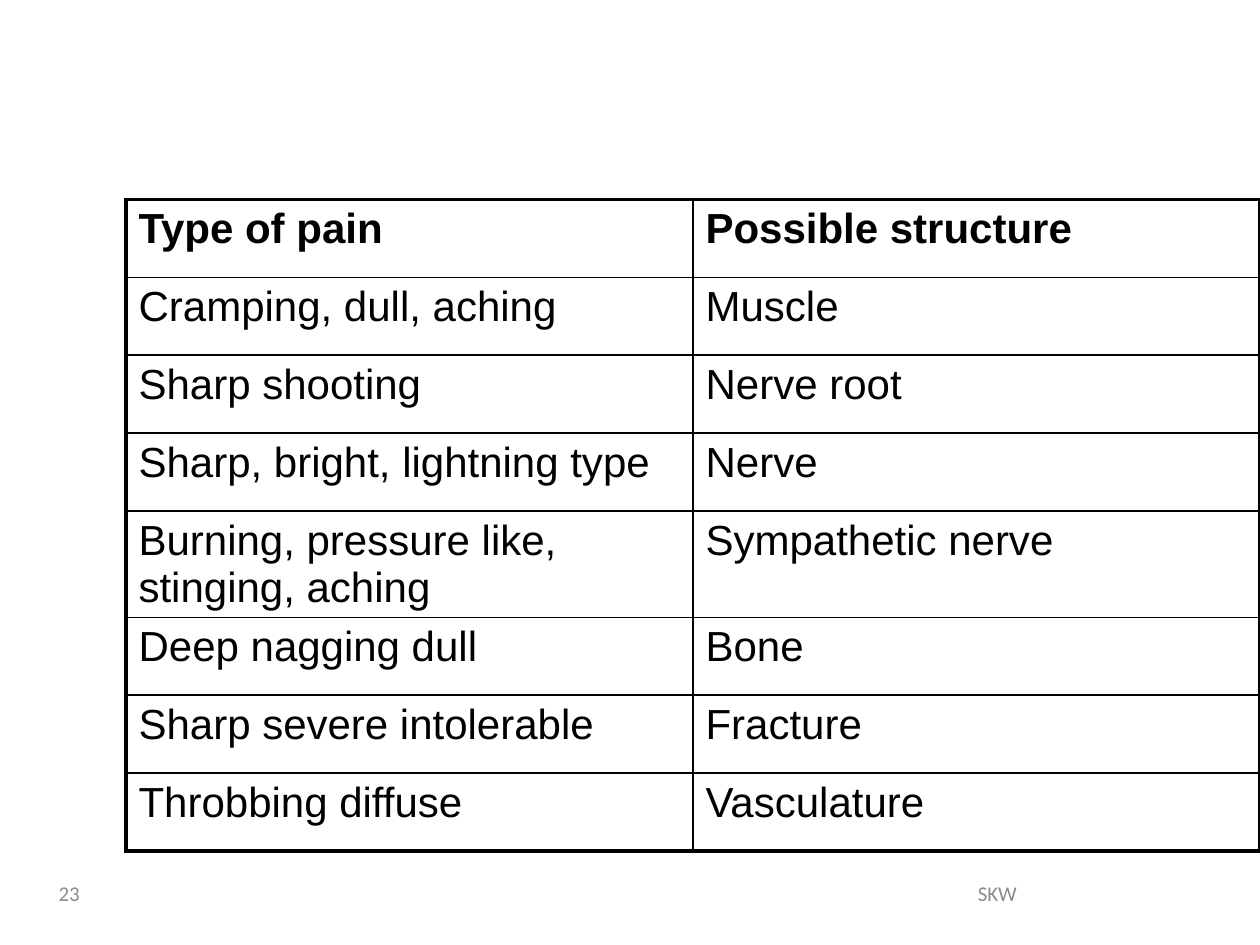
"""Build a slide with a table that links types of pain to body structures."""
from lxml.etree import SubElement
from pptx import Presentation
from pptx.dml.color import RGBColor
from pptx.enum.text import MSO_ANCHOR as Anchor, PP_ALIGN as Align
from pptx.oxml.ns import qn
from pptx.util import Cm, Pt


def write_text(frame, text, size=24, font="Arial", color="000000", bold=False,
               align=Align.LEFT, anchor=Anchor.TOP):
    frame.word_wrap = True
    frame.vertical_anchor = anchor
    paragraph = frame.paragraphs[0]
    paragraph.alignment = align
    run = paragraph.add_run()
    run.text = text
    run.font.size = Pt(size)
    run.font.name = font
    run.font.bold = bold
    run.font.color.rgb = RGBColor.from_string(color)


def add_border(cell, side, width, color="000000"):
    properties = cell._tc.get_or_add_tcPr()
    line = SubElement(properties, qn(f"a:ln{side}"), w=str(Pt(width)))
    fill = SubElement(line, qn("a:solidFill"))
    SubElement(fill, qn("a:srgbClr"), val=color)


presentation = Presentation()
presentation.slide_width = Cm(25.4)
presentation.slide_height = Cm(19.05)
slide = presentation.slides.add_slide(presentation.slide_layouts[6])

pain_rows = [
    ("Type of pain", "Possible structure"),
    ("Cramping, dull, aching", "Muscle"),
    ("Sharp shooting", "Nerve root"),
    ("Sharp, bright, lightning type", "Nerve"),
    ("Burning, pressure like, stinging, aching", "Sympathetic nerve"),
    ("Deep nagging dull", "Bone"),
    ("Sharp severe intolerable", "Fracture"),
    ("Throbbing diffuse", "Vasculature"),
]
row_height = Cm(1.57)
last_row = len(pain_rows) - 1
table = slide.shapes.add_table(len(pain_rows), 2, Cm(2.54), Cm(4.02), Cm(22.86),
                               row_height * len(pain_rows)).table
table.first_row = False
table.horz_banding = False

for row, texts in enumerate(pain_rows):
    table.rows[row].height = row_height
    for column, text in enumerate(texts):
        cell = table.cell(row, column)
        write_text(cell.text_frame, text, bold=row == 0)
        outer_sides = {"L": column == 0, "R": column == 1,
                       "T": row == 0, "B": row == last_row}
        for side, is_outer in outer_sides.items():
            add_border(cell, side, 2.25 if is_outer else 1)
        cell.fill.background()

footers = [
    ("23", 0.23, 1.63, Align.RIGHT),
    ("SKW", 16.08, 8.05, Align.CENTER),
]
for text, left, width, align in footers:
    footer = slide.shapes.add_textbox(Cm(left), Cm(17.35), Cm(width), Cm(1.33))
    write_text(footer.text_frame, text, size=12, font="Calibri", color="8C8C8C",
               align=align, anchor=Anchor.MIDDLE)

presentation.save("out.pptx")
